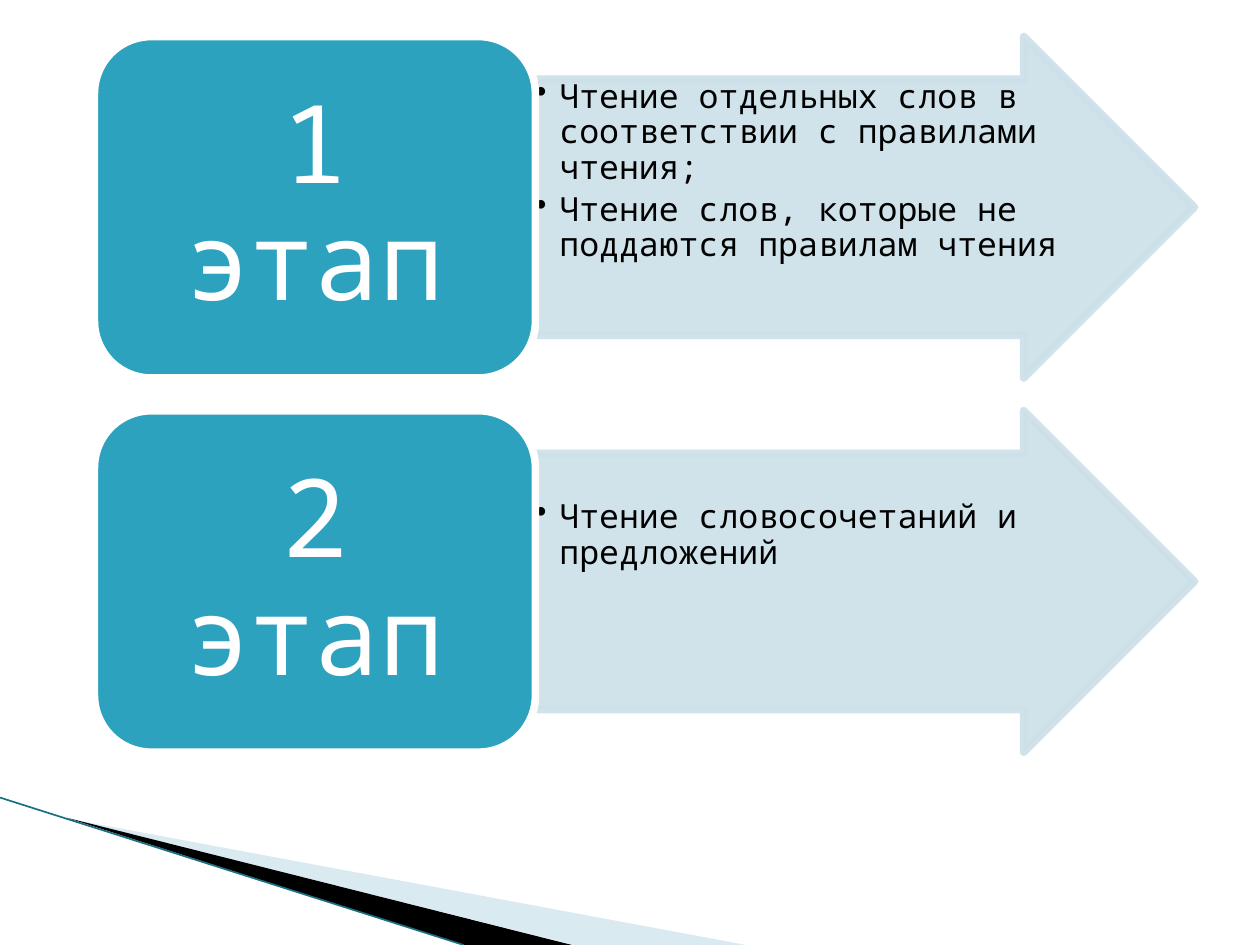
"""Build a slide showing two stages of learning to read."""
from lxml import etree
from pptx import Presentation
from pptx.dml.color import RGBColor
from pptx.enum.shapes import MSO_CONNECTOR, MSO_SHAPE
from pptx.enum.text import MSO_ANCHOR, PP_ALIGN
from pptx.oxml.ns import qn
from pptx.util import Inches, Pt

ARROW, ROUNDED = MSO_SHAPE.RIGHT_ARROW, MSO_SHAPE.ROUNDED_RECTANGLE
STRAIGHT = MSO_CONNECTOR.STRAIGHT
TOP, MIDDLE = MSO_ANCHOR.TOP, MSO_ANCHOR.MIDDLE
CENTER = PP_ALIGN.CENTER
FONT = "Noto Sans Mono"
PALE_BLUE = "CDE0E8"


def color(hex_string):
    return RGBColor.from_string(hex_string)


def paint(shape, fill, line=None, opacity=100):
    shape.shadow.inherit = False
    shape.fill.solid()
    shape.fill.fore_color.rgb = color(fill)
    if line:
        shape.line.color.rgb = color(line)
        shape.line.width = Pt(4.33)
    else:
        shape.line.fill.background()
    if opacity < 100:
        for element in shape._element.spPr.iter(qn("a:srgbClr")):
            etree.SubElement(element, qn("a:alpha"), val=str(opacity * 1000))


presentation = Presentation()
presentation.slide_width, presentation.slide_height = Inches(10), Inches(7.5)
slide = presentation.slides.add_slide(presentation.slide_layouts[6])

wedges = [
    ([(0.55, 6.5), (5.92, 7.5), (4.56, 7.5)], "A0CBDC", 40),
    ([(0.53, 6.49), (4.54, 7.5), (3.68, 7.5)], "000000", 100),
]
for points, fill, opacity in wedges:
    start, *rest = [(Inches(x), Inches(y)) for x, y in points]
    builder = slide.shapes.build_freeform(*start, scale=1.0)
    builder.add_line_segments(rest, close=True)
    paint(builder.convert_to_shape(), fill, opacity=opacity)

edge = slide.shapes.add_connector(STRAIGHT, Inches(0), Inches(6.33), Inches(3.68), Inches(7.5))
edge.line.color.rgb = color("1B6F83")
edge.line.width = Pt(0.95)
etree.SubElement(edge._element.spPr, qn("a:effectLst"))

stages = [
    ("1 этап", 0.33, [
        "Чтение отдельных слов в соответствии с правилами чтения;",
        "Чтение слов, которые не поддаются правилам чтения",
    ]),
    ("2 этап", 0.7, ["Чтение словосочетаний и предложений"]),
]
stage_top, stage_pitch, stage_height = 0.29, 2.97, 2.71
for index, (label, text_offset, items) in enumerate(stages):
    top = stage_top + index * stage_pitch
    arrow = slide.shapes.add_shape(ARROW, Inches(4.24), Inches(top), Inches(5.24), Inches(stage_height))
    arrow.adjustments[0], arrow.adjustments[1] = 0.75, 0.5
    paint(arrow, PALE_BLUE, PALE_BLUE, opacity=90)

    details = slide.shapes.add_textbox(
        Inches(4.24), Inches(top + text_offset), Inches(4.23), Inches(2.36 - text_offset))
    frame = details.text_frame
    frame.text = "\n".join(items)
    frame.word_wrap = True
    frame.vertical_anchor = TOP
    frame.margin_left = frame.margin_right = frame.margin_top = frame.margin_bottom = Inches(0.01)
    for paragraph in frame.paragraphs:
        paragraph.line_spacing = 0.9
        paragraph.space_after = Pt(3)
        properties = paragraph._p.get_or_add_pPr()
        properties.set("marL", str(Inches(0.19)))
        properties.set("indent", str(-Inches(0.19)))
        etree.SubElement(properties, qn("a:buChar"), char="•")
        font = paragraph.runs[0].font
        font.name, font.size = FONT, Pt(19)
        font.color.rgb = color("000000")

    stage = slide.shapes.add_shape(ROUNDED, Inches(0.75), Inches(top), Inches(3.5), Inches(stage_height))
    paint(stage, "2DA2BF", "FFFFFF")
    frame = stage.text_frame
    frame.text = label
    frame.word_wrap = True
    frame.vertical_anchor = MIDDLE
    frame.margin_left = frame.margin_right = Inches(0.26)
    frame.margin_top = frame.margin_bottom = Inches(0.13)
    paragraph = frame.paragraphs[0]
    paragraph.alignment = CENTER
    paragraph.line_spacing = 0.9
    font = paragraph.runs[0].font
    font.name, font.size = FONT, Pt(62)
    font.color.rgb = color("FFFFFF")

presentation.save("out.pptx")
